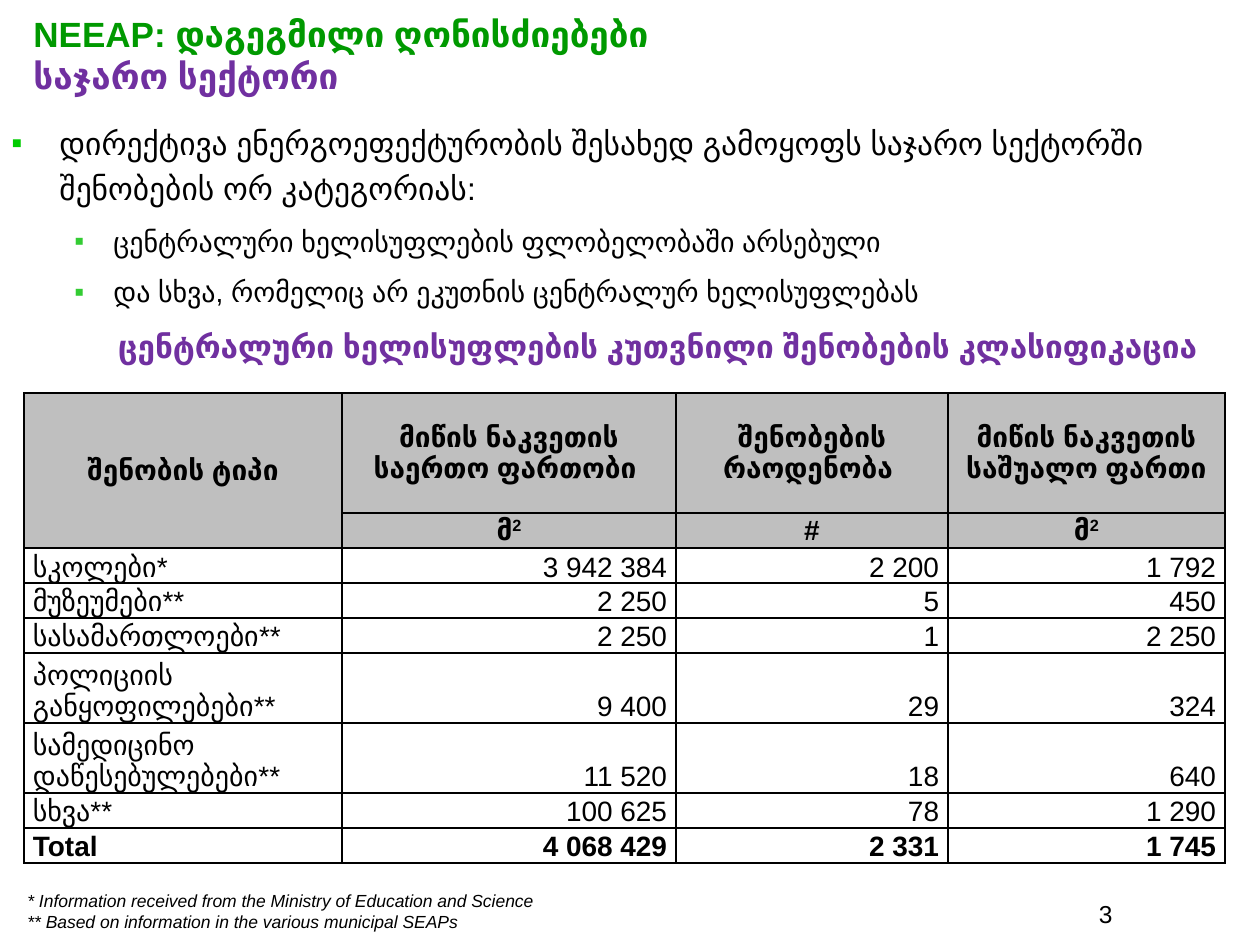
from lxml import etree
from pptx import Presentation
from pptx.dml.color import RGBColor
from pptx.enum.text import MSO_ANCHOR, PP_ALIGN
from pptx.oxml.ns import qn
from pptx.util import Emu, Pt

LEFT, CENTER, RIGHT = PP_ALIGN.LEFT, PP_ALIGN.CENTER, PP_ALIGN.RIGHT
TOP, MIDDLE, BOTTOM = MSO_ANCHOR.TOP, MSO_ANCHOR.MIDDLE, MSO_ANCHOR.BOTTOM
FONT, BLACK, GREEN, PURPLE, GREY = "Arial", "000000", "009900", "7030A0", "BFBFBF"

# Content
TITLE = [("NEEAP: დაგეგმილი ღონისძიებები", GREEN), ("საჯარო სექტორი", PURPLE)]
# text, size, left margin px, hanging px, bullet colour
BULLETS = [
    ("დირექტივა ენერგოეფექტურობის შესახედ გამოყოფს საჯარო სექტორში შენობების ორ კატეგორიას:",
     18, 48, 48, "00CC00"),
    ("ცენტრალური ხელისუფლების ფლობელობაში არსებული", 16, 102, 39, "33CC33"),
    ("და სხვა, რომელიც არ ეკუთნის ცენტრალურ ხელისუფლებას", 16, 102, 39, "33CC33"),
]
TABLE_TITLE = "ცენტრალური ხელისუფლების კუთვნილი შენობების კლასიფიკაცია"
HEADERS = [
    ("შენობის ტიპი", "მიწის ნაკვეთის საერთო ფართობი ", "შენობების რაოდენობა ",
     "მიწის ნაკვეთის საშუალო ფართი"),
    ("", "მ^2", "#", "მ^2"),  # ^ marks a superscript
]
ROWS = [
    ("სკოლები*", "3 942 384", "2 200", "1 792"),
    ("მუზეუმები**", "2 250", "5", "450"),
    ("სასამართლოები**", "2 250", "1", "2 250"),
    ("პოლიციის განყოფილებები**", "9 400", "29", "324"),
    ("სამედიცინო დაწესებულებები**", "11 520", "18", "640"),
    ("სხვა**", "100 625", "78", "1 290"),
    ("Total", "4 068 429", "2 331", "1 745"),
]
NOTES = ["* Information received from the Ministry of Education and Science",
         "** Based on information in the various municipal SEAPs"]
COL_WIDTHS = [318, 334, 272, 277]
LINE = 35
ROW_HEIGHTS = [120] + [LINE] * 4 + [2 * LINE] * 2 + [LINE] * 2


def px(n):
    return Emu(round(n * 914400 / 126))


def rgb(color):
    return RGBColor.from_string(color)


def write(p, text, size=16, color=BLACK, bold=False, italic=False, align=LEFT):
    p.alignment = align
    for i, part in enumerate(text.split("^")):
        r = p.add_run()
        r.text = part
        f = r.font
        f.name, f.size, f.bold, f.italic = FONT, Pt(size), bold, italic
        f.color.rgb = rgb(color)
        if i:
            r._r.get_or_add_rPr().set("baseline", "30000")


def add_box(s, x, y, w, h, anchor=TOP, wrap=True):
    tf = s.shapes.add_textbox(px(x), px(y), px(w), px(h)).text_frame
    tf.word_wrap, tf.vertical_anchor = wrap, anchor
    return tf


def next_paragraph(tf):
    return tf.paragraphs[0] if not tf.paragraphs[0].runs else tf.add_paragraph()


def body_paragraph(tf, margin, hanging=0, bullet=None):
    first = not tf.paragraphs[0].runs
    p = next_paragraph(tf)
    p.line_spacing = 1.2
    if not first:
        p.space_before = Pt(6)
    pPr = p._p.get_or_add_pPr()
    pPr.set("marL", str(px(margin)))
    pPr.set("indent", str(px(-hanging)))
    if bullet:
        clr = etree.SubElement(pPr, qn("a:buClr"))
        etree.SubElement(clr, qn("a:srgbClr"), val=bullet)
        etree.SubElement(pPr, qn("a:buFont"), typeface=FONT)
        etree.SubElement(pPr, qn("a:buChar"), char="▪")
    return p


def style_cell(cell, fill, anchor):
    tcPr = cell._tc.get_or_add_tcPr()
    for side in ("lnL", "lnR", "lnT", "lnB"):
        ln = etree.SubElement(tcPr, qn("a:" + side), w=str(Pt(1)))
        solid = etree.SubElement(ln, qn("a:solidFill"))
        etree.SubElement(solid, qn("a:srgbClr"), val=BLACK)
    if fill:
        cell.fill.solid()
        cell.fill.fore_color.rgb = rgb(fill)
    else:
        cell.fill.background()
    cell.vertical_anchor = anchor
    cell.margin_left = cell.margin_right = px(9)
    cell.margin_top = cell.margin_bottom = 0


def add_buildings_table(s, x, y):
    data = HEADERS + ROWS
    frame = s.shapes.add_table(len(data), len(COL_WIDTHS), px(x), px(y),
                               px(sum(COL_WIDTHS)), px(sum(ROW_HEIGHTS)))
    table = frame.table
    table.first_row = table.horz_banding = False
    for col, w in zip(table.columns, COL_WIDTHS):
        col.width = px(w)
    for row, h in zip(table.rows, ROW_HEIGHTS):
        row.height = px(h)
    for i, values in enumerate(data):
        header = i < len(HEADERS)
        bold = header or i == len(data) - 1
        for j, text in enumerate(values):
            cell = table.cell(i, j)
            style_cell(cell, GREY if header else None, MIDDLE if header else BOTTOM)
            align = CENTER if header else RIGHT if j else LEFT
            if text:
                write(cell.text_frame.paragraphs[0], text, bold=bold, align=align)
    table.cell(0, 0).merge(table.cell(1, 0))


def main():
    prs = Presentation()
    prs.slide_width, prs.slide_height = px(1260), px(945)
    s = prs.slides.add_slide(prs.slide_layouts[6])

    # Title
    p = add_box(s, 21, 6, 1211, 100).paragraphs[0]
    for i, (text, color) in enumerate(TITLE):
        if i:
            p.add_line_break()
        write(p, text, size=20, color=color, bold=True)

    # Bullets and table heading
    tf = add_box(s, -1, 110, 1255, 270)
    for text, size, margin, hanging, color in BULLETS:
        write(body_paragraph(tf, margin, hanging, color), text, size=size)
    write(body_paragraph(tf, 63), TABLE_TITLE, size=18, color=PURPLE, bold=True, align=CENTER)

    add_buildings_table(s, 24, 393)

    # Footnotes and page number
    tf = add_box(s, 15, 883, 535, 56, MIDDLE, wrap=False)
    for text in NOTES:
        write(next_paragraph(tf), text, size=10, italic=True)
    tf = add_box(s, 863, 872, 262, 63, BOTTOM)
    write(tf.paragraphs[0], "3", size=14, align=RIGHT)

    prs.save("out.pptx")


if __name__ == "__main__":
    main()
